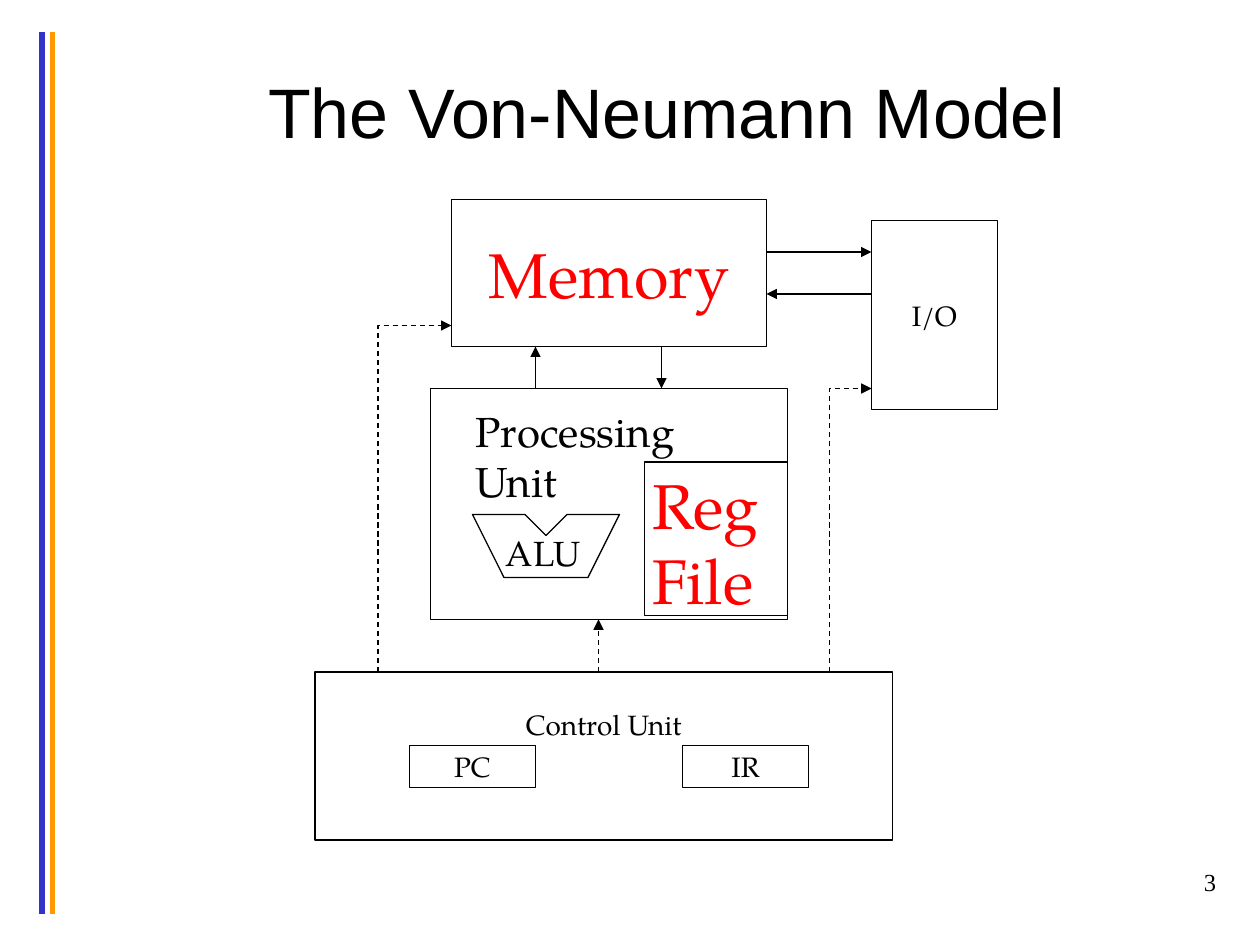
from lxml.etree import SubElement
from pptx import Presentation
from pptx.dml.color import RGBColor
from pptx.enum.dml import MSO_LINE
from pptx.enum.shapes import MSO_CONNECTOR, MSO_SHAPE
from pptx.enum.text import MSO_ANCHOR, PP_ALIGN
from pptx.oxml.ns import qn
from pptx.util import Inches, Pt

COLS, ROWS = 120, 90  # grid of the 10 x 7.5 inch slide
SERIF = "TeX Gyre Pagella"
BLACK, RED = "000000", "FF0000"
MID = {"vertical_anchor": MSO_ANCHOR.MIDDLE}


def unit(n):
    """Length of n grid steps."""
    return Inches(n * 10 / COLS)


def units(*nums):
    return [unit(n) for n in nums]


def color(code):
    return RGBColor.from_string(code)


def apply(item, values):
    for name, value in values.items():
        setattr(item, name, value)


def write(shape, text, size, hue=BLACK, font=SERIF, align=PP_ALIGN.LEFT, **frame):
    """Fill the shape with one paragraph per line of text."""
    body = shape.text_frame
    apply(body, {"word_wrap": True, **frame})
    body.text = text
    for par in body.paragraphs:
        par.alignment = align
        apply(par.font, {"size": Pt(size), "name": font})
        par.font.color.rgb = color(hue)


def label(slide, area, text, size, **style):
    write(slide.shapes.add_textbox(*units(*area)), text, size, **style)


def outline(shape):
    shape.shadow.inherit = False
    shape.fill.background()
    shape.line.color.rgb = color(BLACK)
    shape.line.width = Pt(0.75)


def box(slide, area, text="", size=16, **style):
    shape = slide.shapes.add_shape(MSO_SHAPE.RECTANGLE, *units(*area))
    outline(shape)
    if text:
        write(shape, text, size, align=PP_ALIGN.CENTER, **MID, **style)


def line(slide, ends, hue=BLACK, width=0.75, dash=False, head=True):
    link = slide.shapes.add_connector(MSO_CONNECTOR.STRAIGHT, *units(*ends))
    link.line.color.rgb = color(hue)
    link.line.width = Pt(width)
    if dash:
        link.line.dash_style = MSO_LINE.DASH
    if head:
        SubElement(link.line._get_or_add_ln(), qn("a:tailEnd"), type="triangle")
    SubElement(link._element.spPr, qn("a:effectLst"))
    return link


def bend(slide, x1, y1, x2, y2):
    """Dashed arrow that runs up, then right: a right-down elbow turned by 270 degrees."""
    link = line(slide, (x1, y1, x2, y2), dash=True)
    wide, tall = x2 - x1, y1 - y2
    left, top = (x1 + x2 - tall) / 2, (y1 + y2 - wide) / 2
    props = link._element.spPr
    props.find(qn("a:prstGeom")).set("prst", "bentConnector2")
    frame = props.find(qn("a:xfrm"))
    frame.attrib.pop("flipV", None)
    frame.set("rot", str(270 * 60000))
    apply(link, dict(zip(("left", "top", "width", "height"),
                         units(left, top, tall, wide))))


def notch(slide, points):
    """Closed outline through the grid points."""
    first, *rest = [tuple(units(*point)) for point in points]
    path = slide.shapes.build_freeform(*first)
    path.add_line_segments(rest, close=True)
    outline(path.convert_to_shape())


def main():
    deck = Presentation()
    apply(deck, {"slide_width": unit(COLS), "slide_height": unit(ROWS)})
    slide = deck.slides.add_slide(deck.slide_layouts[6])

    for x, hue in ((4, "3333CC"), (5, "FF9900")):
        line(slide, (x, 3, x, 87), hue, width=3, head=False)
    label(slide, (92, 82, 25, 6), "3", 14, font="Times New Roman", align=PP_ALIGN.RIGHT)
    label(slide, (9, 3, 109, 15), "The Von-Neumann Model", 40,
          font="Arial", align=PP_ALIGN.CENTER, **MID)

    box(slide, (43, 19, 30, 14), "Memory", 36, hue=RED)
    box(slide, (41, 37, 34, 22))
    box(slide, (30, 64, 55, 16), "Control Unit", margin_bottom=Inches(0.55))
    box(slide, (83, 21, 12, 18), "I/O")
    for x, name in ((39, "PC"), (65, "IR")):
        box(slide, (x, 71, 12, 4), name)

    notch(slide, [(45, 49), (50, 49), (52, 51), (54, 49), (59, 49), (56, 55), (48, 55)])
    label(slide, (47, 50, 10, 5), "ALU", 20)
    label(slide, (61, 43.8, 14, 15.7), "Reg\nFile", 36, hue=RED)
    box(slide, (61.4, 44, 13.6, 14.6))
    label(slide, (44.1, 38, 27.9, 6), "Processing Unit", 24)

    for ends in ((51, 37, 51, 33), (63, 33, 63, 37), (73, 24, 83, 24), (83, 28, 73, 28)):
        line(slide, ends)
    line(slide, (57, 64, 57, 59), dash=True)
    bend(slide, 36, 64, 43, 31)
    bend(slide, 79, 64, 83, 37)

    deck.save("out.pptx")


if __name__ == "__main__":
    main()
